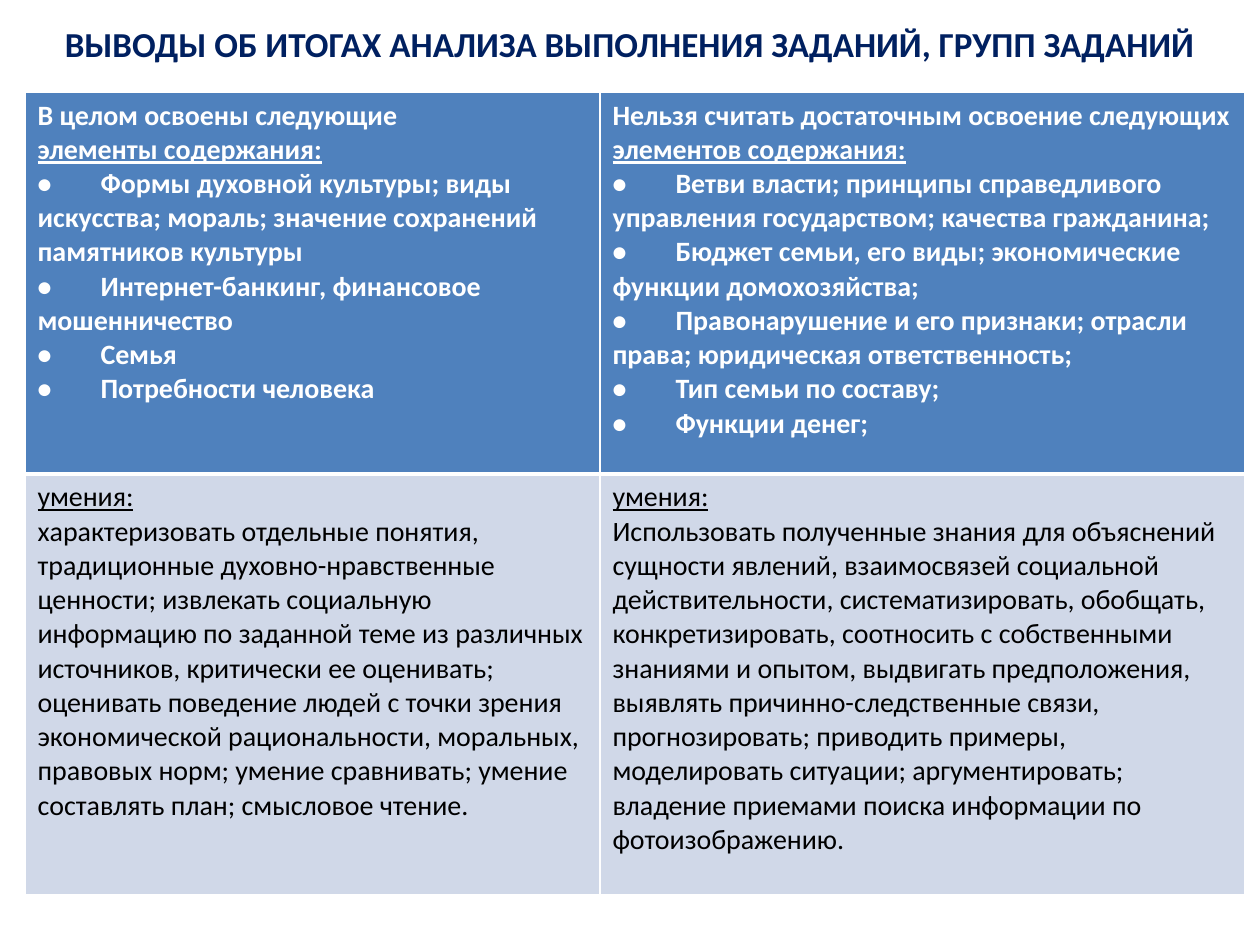
from dataclasses import dataclass

from lxml.etree import SubElement
from pptx import Presentation
from pptx.dml.color import RGBColor
from pptx.enum.text import MSO_ANCHOR, PP_ALIGN
from pptx.oxml.ns import qn
from pptx.util import Emu, Pt

PX = 914400 // 126


@dataclass(frozen=True)
class Theme:
    font: str = "Calibri"
    title_size: int = 20
    body_size: int = 16
    title: str = "002060"
    header: str = "4F81BD"
    body: str = "D0D8E8"
    light: str = "FFFFFF"
    dark: str = "000000"
    thin: int = 1
    thick: int = 3


def px(n):
    return Emu(n * PX)


def write(p, text, *, font, size, color, bold=False, underline=False, align=None):
    p.alignment = align
    r = p.add_run()
    r.text = text
    r.font.name, r.font.size = font, Pt(size)
    r.font.bold, r.font.underline = bold, underline
    r.font.color.rgb = RGBColor.from_string(color)


class SlideBuilder:
    def __init__(self, prs, theme):
        self.theme = theme
        self.s = prs.slides.add_slide(prs.slide_layouts[6])

    def title(self, text, x, y, w, h):
        t = self.theme
        tf = self.s.shapes.add_textbox(px(x), px(y), px(w), px(h)).text_frame
        tf.word_wrap = True
        tf.vertical_anchor = MSO_ANCHOR.MIDDLE
        write(tf.paragraphs[0], text, font=t.font, size=t.title_size,
              color=t.title, bold=True, align=PP_ALIGN.CENTER)

    def borders(self, cell, widths):
        tc_pr = cell._tc.get_or_add_tcPr()
        for i, (side, width) in enumerate(widths.items()):
            ln = SubElement(tc_pr, qn(f"a:ln{side}"), w=str(Pt(width)))
            fill = SubElement(ln, qn("a:solidFill"))
            SubElement(fill, qn("a:srgbClr"), val=self.theme.light)
            tc_pr.insert(i, ln)

    def cell(self, cell, lines, underlined, is_header):
        t = self.theme
        cell.fill.solid()
        cell.fill.fore_color.rgb = RGBColor.from_string(t.header if is_header else t.body)
        # The rule between the two rows is the thick one
        self.borders(cell, {"L": t.thin, "R": t.thin,
                            "T": t.thin if is_header else t.thick,
                            "B": t.thick if is_header else t.thin})
        tf = cell.text_frame
        for i, line in enumerate(lines):
            p = tf.add_paragraph() if i else tf.paragraphs[0]
            write(p, line, font=t.font, size=t.body_size,
                  color=t.light if is_header else t.dark,
                  bold=is_header, underline=i == underlined)

    def table(self, rows, x, y, widths, heights):
        tbl = self.s.shapes.add_table(len(heights), len(widths), px(x), px(y),
                                      px(sum(widths)), px(sum(heights))).table
        for col, w in zip(tbl.columns, widths):
            col.width = px(w)
        for i, (h, row) in enumerate(zip(heights, rows)):
            tbl.rows[i].height = px(h)
            is_header = i == 0
            for j, lines in enumerate(row):
                self.cell(tbl.cell(i, j), lines, 1 if is_header else 0, is_header)


def bullets(*items):
    return [f"•\t{item}" for item in items]


CONTENT = [
    ["В целом освоены следующие", "элементы содержания:",
     *bullets("Формы духовной культуры; виды искусства; мораль; "
              "значение сохранений памятников культуры",
              "Интернет-банкинг, финансовое мошенничество",
              "Семья",
              "Потребности человека")],
    ["Нельзя считать достаточным освоение следующих", "элементов содержания:",
     *bullets("Ветви власти; принципы справедливого управления государством; "
              "качества гражданина;",
              "Бюджет семьи, его виды; экономические функции домохозяйства;",
              "Правонарушение и его признаки; отрасли права; "
              "юридическая ответственность;",
              "Тип семьи по составу;",
              "Функции денег;")],
]
SKILLS = [
    ["умения:",
     "характеризовать отдельные понятия, традиционные духовно-нравственные "
     "ценности; извлекать социальную информацию по заданной теме из различных "
     "источников, критически ее оценивать; оценивать поведение людей с точки "
     "зрения экономической рациональности, моральных, правовых норм; умение "
     "сравнивать; умение составлять план; смысловое чтение."],
    ["умения:",
     "Использовать полученные знания для объяснений сущности явлений, "
     "взаимосвязей социальной действительности, систематизировать, обобщать, "
     "конкретизировать, соотносить с собственными знаниями и опытом, выдвигать "
     "предположения, выявлять причинно-следственные связи, прогнозировать; "
     "приводить примеры, моделировать ситуации; аргументировать; владение "
     "приемами поиска информации по фотоизображению."],
]


def main():
    prs = Presentation()
    prs.slide_width, prs.slide_height = px(1260), px(945)
    slide = SlideBuilder(prs, Theme())

    # Heading
    slide.title("ВЫВОДЫ ОБ ИТОГАХ АНАЛИЗА ВЫПОЛНЕНИЯ ЗАДАНИЙ, ГРУПП ЗАДАНИЙ",
                0, 0, 1260, 87)

    # Content mastered or not above, skills below
    slide.table([CONTENT, SKILLS], 25, 92, widths=[575, 645], heights=[382, 421])

    prs.save("out.pptx")


if __name__ == "__main__":
    main()
